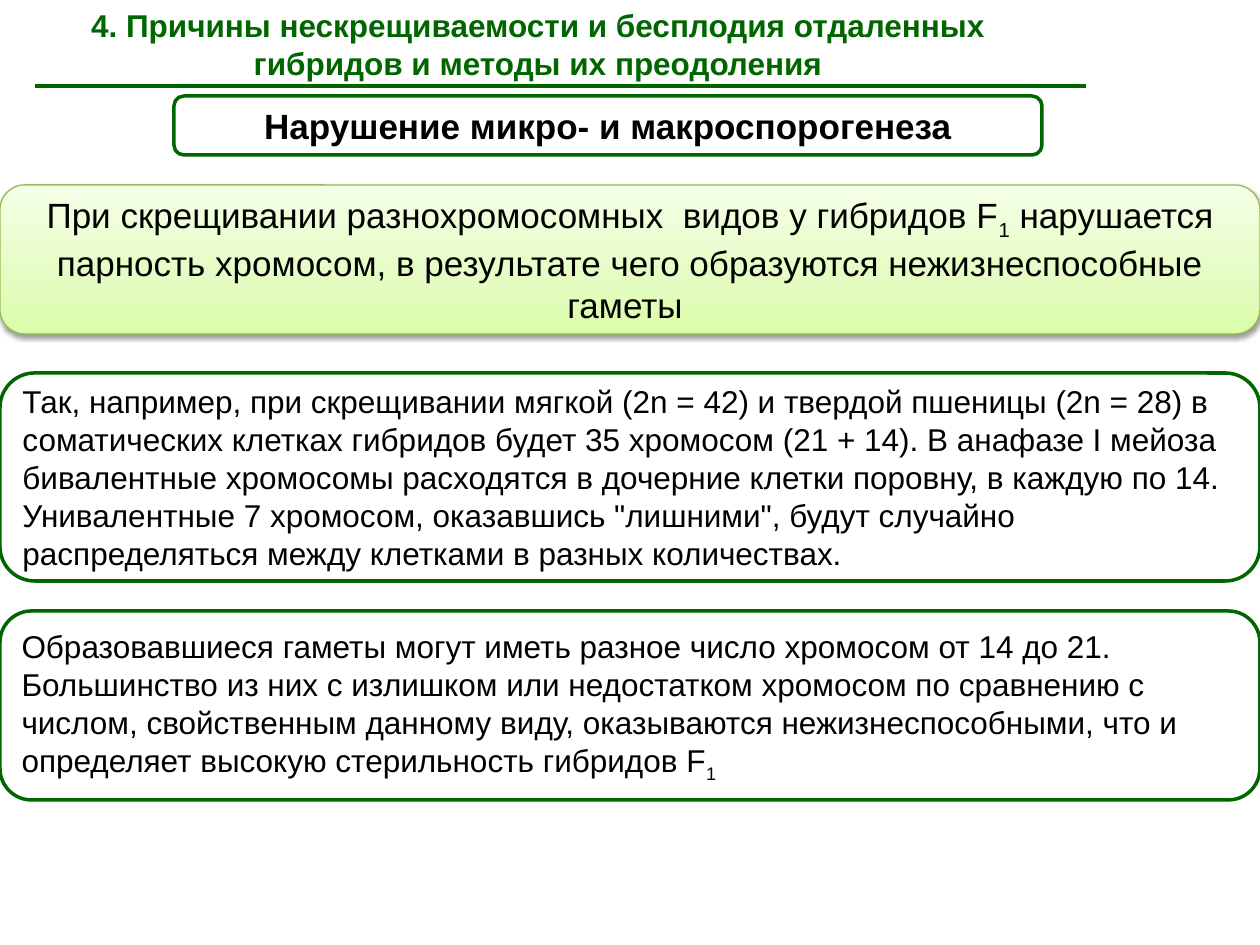
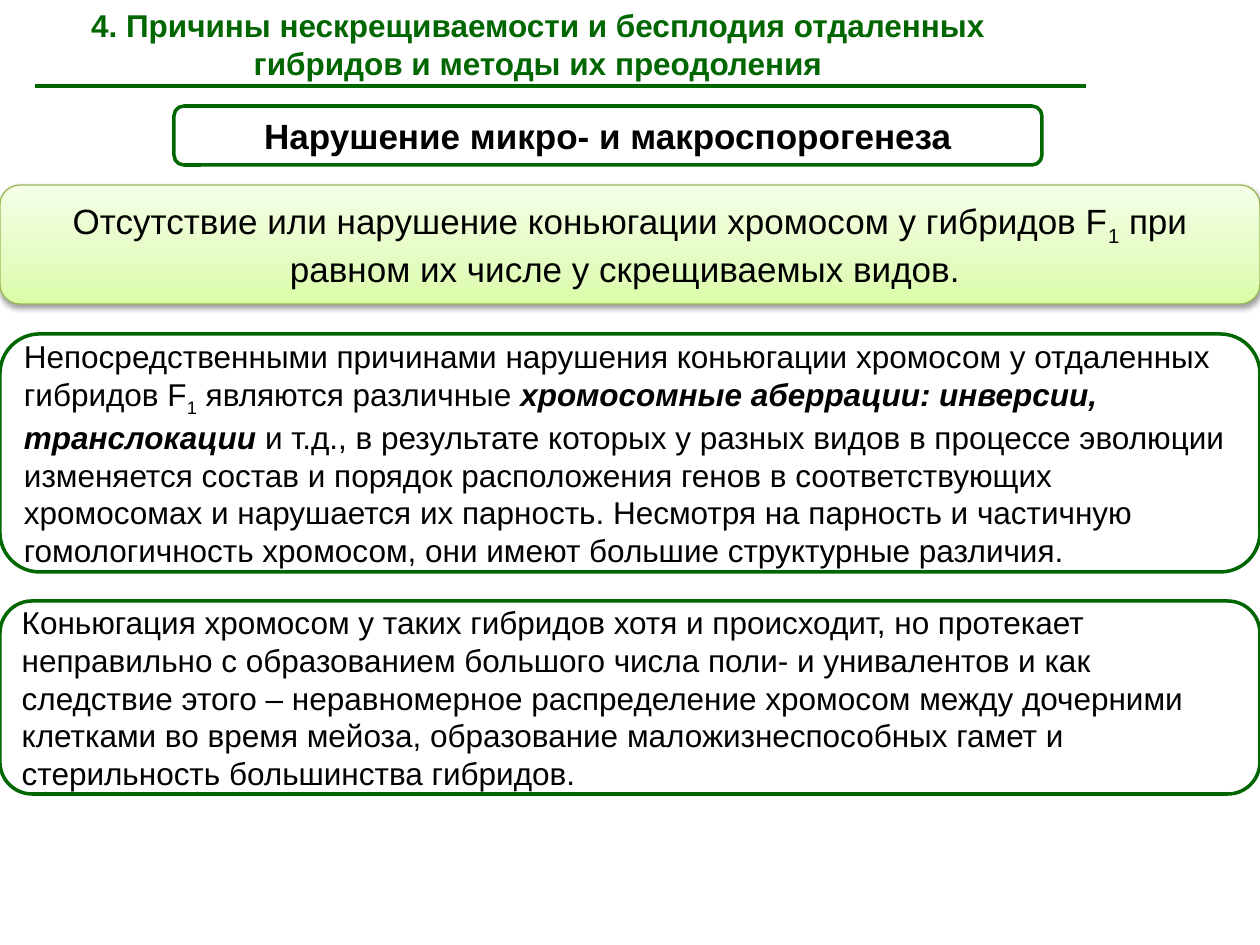
from dataclasses import dataclass

from lxml.etree import SubElement
from pptx import Presentation
from pptx.dml.color import RGBColor
from pptx.enum.shapes import MSO_CONNECTOR as Link, MSO_SHAPE as Form
from pptx.enum.text import MSO_ANCHOR as Anchor, MSO_AUTO_SIZE as Auto, PP_ALIGN as Align
from pptx.oxml.ns import qn
from pptx.shapes.autoshape import Shape
from pptx.slide import Slide
from pptx.text.text import _Run as Run
from pptx.util import Emu, Pt

SCALE = 914400 / 126
WIDE, HIGH = 1260, 945
FONT = "Arial"
COLORS = {
    "green": "006600",
    "text": "000000",
    "edge": "98B955",
    "shade": "000000",
    "low": "DAFDA7",
    "mid": "E4FCC2",
    "high": "F5FFE7",
}
STOPS = ((0, "low"), (35, "mid"), (100, "high"))
TITLE = "4. Причины нескрещиваемости и бесплодия отдаленных гибридов и методы их преодоления"
LABEL = "Нарушение микро- и макроспорогенеза"


@dataclass(frozen=True)
class Piece:
    text: str
    sub: bool = False
    strong: bool = False


@dataclass(frozen=True)
class Box:
    top: int
    high: int
    words: tuple[Piece, ...]
    left: int = 0
    wide: int = WIDE
    size: int = 18
    align: Align = Align.LEFT
    bold: bool = False
    glow: bool = False


def label(top: int) -> Box:
    return Box(top, 59, (Piece(LABEL),), left=174, wide=868, size=20,
               align=Align.CENTER, bold=True)


def banner(high: int, *words: Piece) -> Box:
    return Box(185, high, words, size=20, align=Align.CENTER, glow=True)


ONE = Piece("1", sub=True)
PAGES = (
    (
        label(96),
        banner(
            149,
            Piece("При скрещивании разнохромосомных  видов у гибридов F"),
            ONE,
            Piece(" нарушается парность хромосом, в результате чего образуются "
                  "нежизнеспособные гаметы "),
        ),
        Box(373, 208, (
            Piece("Так, например, при скрещивании мягкой (2n = 42) и твердой пшеницы "
                  "(2n = 28) в соматических клетках гибридов будет 35 хромосом (21 + 14). "
                  "В анафазе I мейоза бивалентные хромосомы расходятся в дочерние клетки "
                  "поровну, в каждую по 14. Унивалентные 7 хромосом, оказавшись "
                  "\"лишними\", будут случайно распределяться между клетками в разных "
                  "количествах."),
        )),
        Box(611, 189, (
            Piece("Образовавшиеся гаметы могут иметь разное число хромосом от 14 до 21. "
                  "Большинство из них с излишком или недостатком хромосом по сравнению с "
                  "числом, свойственным данному виду, оказываются нежизнеспособными, что "
                  "и определяет высокую стерильность гибридов F"),
            ONE,
        )),
    ),
    (
        label(106),
        banner(
            119,
            Piece("Отсутствие или нарушение коньюгации хромосом у гибридов F"),
            ONE,
            Piece(" при равном их числе у скрещиваемых видов. "),
        ),
        Box(334, 238, (
            Piece("Непосредственными причинами нарушения коньюгации хромосом у "
                  "отдаленных гибридов F"),
            ONE,
            Piece(" являются различные "),
            Piece("хромосомные аберрации: инверсии, транслокации ", strong=True),
            Piece("и т.д., в результате которых у разных видов в процессе эволюции "
                  "изменяется состав и порядок расположения генов в соответствующих "
                  "хромосомах и нарушается их парность. Несмотря на парность и частичную "
                  "гомологичность хромосом, они имеют большие структурные различия."),
        )),
        Box(601, 193, (
            Piece("Коньюгация хромосом у таких гибридов хотя и происходит, но протекает "
                  "неправильно с образованием большого числа поли- и унивалентов и как "
                  "следствие этого – неравномерное распределение хромосом между дочерними "
                  "клетками во время мейоза, образование маложизнеспособных гамет и "
                  "стерильность большинства гибридов."),
        )),
    ),
)


def px(count: int) -> Emu:
    return Emu(round(count * SCALE))


def paint(name: str) -> RGBColor:
    return RGBColor.from_string(COLORS[name])


def style(run: Run, size: int, color: str, bold: bool) -> None:
    font = run.font
    font.name, font.size, font.bold = FONT, Pt(size), bold
    font.color.rgb = paint(color)


def add_glow(shape: Shape) -> None:
    """Give the shape its upward gradient and soft shadow."""
    shape.fill.gradient()
    shape.fill.gradient_angle = 90
    props = shape._element.spPr
    stops = props.find(qn("a:gradFill")).find(qn("a:gsLst"))
    for old in list(stops):
        stops.remove(old)
    for place, tone in STOPS:
        stop = SubElement(stops, qn("a:gs"), pos=str(place * 1000))
        SubElement(stop, qn("a:srgbClr"), val=COLORS[tone])
    cast = SubElement(props.find(qn("a:effectLst")), qn("a:outerShdw"),
                      blurRad=str(Pt(3.1)), dist=str(Pt(1.6)),
                      dir="5400000", rotWithShape="0")
    shade = SubElement(cast, qn("a:srgbClr"), val=COLORS["shade"])
    SubElement(shade, qn("a:alpha"), val="38000")


def add_box(slide: Slide, box: Box) -> None:
    shape = slide.shapes.add_shape(Form.ROUNDED_RECTANGLE, px(box.left), px(box.top),
                                   px(box.wide), px(box.high))
    shape.shadow.inherit = False
    shape.line.color.rgb = paint("edge" if box.glow else "green")
    shape.line.width = Pt(0.75 if box.glow else 2)
    if box.glow:
        add_glow(shape)
    else:
        shape.fill.background()
    frame = shape.text_frame
    frame.word_wrap = True
    frame.vertical_anchor = Anchor.MIDDLE
    para = frame.paragraphs[0]
    para.alignment = box.align
    for piece in box.words:
        run = para.add_run()
        run.text = piece.text
        style(run, box.size, "text", box.bold or piece.strong)
        run.font.italic = piece.strong
        if piece.sub:
            run._r.get_or_add_rPr().set("baseline", "-25000")


def add_head(slide: Slide) -> None:
    """Set the title and the rule below it."""
    rule = slide.shapes.add_connector(Link.STRAIGHT, px(35), px(86), px(1086), px(86))
    rule.line.color.rgb = paint("green")
    rule.line.width = Pt(2)
    SubElement(rule._element.spPr, qn("a:effectLst"))
    title = slide.shapes.title
    title.left, title.top = px(0), px(0)
    title.width, title.height = px(1076), px(89)
    frame = title.text_frame
    frame.text = TITLE
    frame.word_wrap = True
    frame.auto_size = Auto.SHAPE_TO_FIT_TEXT
    frame.vertical_anchor = Anchor.TOP
    para = frame.paragraphs[0]
    para.alignment = Align.CENTER
    style(para.runs[0], 18, "green", True)


def main() -> None:
    deck = Presentation()
    deck.slide_width, deck.slide_height = px(WIDE), px(HIGH)
    plain = deck.slide_layouts.get_by_name("Title Only")
    for page in PAGES:
        slide = deck.slides.add_slide(plain)
        add_head(slide)
        for box in page:
            add_box(slide, box)
    deck.save("out.pptx")


if __name__ == "__main__":
    main()
